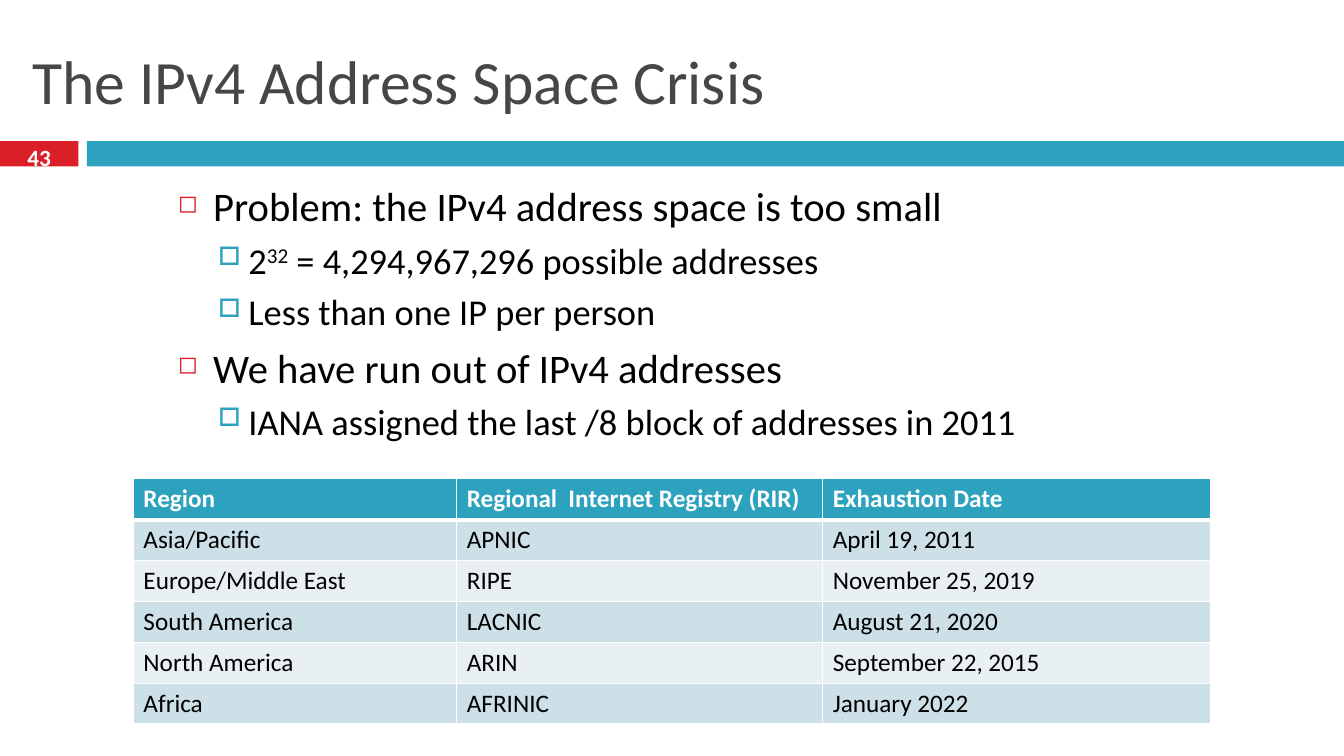
from lxml import etree
from pptx import Presentation
from pptx import util as u
from pptx.dml.color import RGBColor
from pptx.enum import shapes, text
from pptx.oxml import ns

WHITE = RGBColor(0xFF, 0xFF, 0xFF)
BLACK = RGBColor(0, 0, 0)
GRAY = RGBColor(0x46, 0x46, 0x46)
RED = RGBColor(0xDA, 0x1F, 0x28)
TEAL = RGBColor(0x2D, 0xA2, 0xBF)
BANDS = [RGBColor(0xCD, 0xE0, 0xE8), RGBColor(0xE8, 0xF0, 0xF4)]

LEVELS = [
    dict(size=29, left=25.2, hang=25.2, gap=7, mark="◻", color=RED, scale=60),
    dict(size=26, left=50.4, hang=21.6, gap=5.5, mark="□", color=TEAL, scale=70),
]
POINTS = [
    (0, ["Problem: the IPv4 address space is too small"]),
    (1, ["2", "32", " = 4,294,967,296 possible addresses"]),
    (1, ["Less than one IP per person"]),
    (0, ["We have run out of IPv4 addresses"]),
    (1, ["IANA assigned the last /8 block of addresses in 2011"]),
]
REGIONS = [
    ("Region", "Regional  Internet Registry (RIR)", "Exhaustion Date"),
    ("Asia/Pacific", "APNIC", "April 19, 2011"),
    ("Europe/Middle East", "RIPE", "November 25, 2019"),
    ("South America", "LACNIC", "August 21, 2020"),
    ("North America", "ARIN", "September 22, 2015"),
    ("Africa", "AFRINIC", "January 2022"),
]


def add(parent, tag, **attrs):
    node = etree.SubElement(parent, ns.qn(tag))
    for key, value in attrs.items():
        node.set(key, str(value))
    return node


class Deck:
    font = "Calibri"

    def __init__(self, slide):
        self.slide = slide

    def style(self, para, size, color, bold=False):
        for run in para.runs:
            run.font.name = self.font
            run.font.size = u.Pt(size)
            run.font.bold = bold
            run.font.color.rgb = color

    def bar(self, x, y, w, h, color):
        box = self.slide.shapes.add_shape(
            shapes.MSO_SHAPE.RECTANGLE, u.Pt(x), u.Pt(y), u.Pt(w), u.Pt(h))
        box.shadow.inherit = False
        box.fill.solid()
        box.fill.fore_color.rgb = color
        box.line.fill.background()

    def frame(self, x, y, w, h, anchor=text.MSO_ANCHOR.TOP):
        box = self.slide.shapes.add_textbox(u.Pt(x), u.Pt(y), u.Pt(w), u.Pt(h))
        frame = box.text_frame
        frame.word_wrap = True
        frame.vertical_anchor = anchor
        return frame

    def label(self, words, x, y, w, h, size, color, bold=False,
              align=text.PP_ALIGN.LEFT, anchor=text.MSO_ANCHOR.TOP):
        frame = self.frame(x, y, w, h, anchor)
        frame.text = words
        para = frame.paragraphs[0]
        para.alignment = align
        self.style(para, size, color, bold)

    def bullets(self, points, x, y, w, h):
        frame = self.frame(x, y, w, h)
        for i, (depth, parts) in enumerate(points):
            para = frame.add_paragraph() if i else frame.paragraphs[0]
            level = LEVELS[depth]
            para.level = depth
            para.space_before = u.Pt(level["gap"])
            for part in parts:
                para.add_run().text = part
            self.style(para, level["size"], BLACK)
            if len(parts) > 1:
                para.runs[1].font._element.set("baseline", "30000")
            props = para._p.get_or_add_pPr()
            props.set("marL", str(u.Pt(level["left"])))
            props.set("indent", str(-u.Pt(level["hang"])))
            add(add(props, "a:buClr"), "a:srgbClr", val=level["color"])
            add(props, "a:buSzPct", val=level["scale"] * 1000)
            add(props, "a:buChar", char=level["mark"])

    def edges(self, cell, top, bottom):
        props = cell._tc.get_or_add_tcPr()
        for side, width in zip("LRTB", (1, 1, top, bottom)):
            line = add(props, "a:ln" + side, w=u.Pt(width))
            add(add(line, "a:solidFill"), "a:srgbClr", val=WHITE)

    def table(self, rows, x, y, widths, height):
        grid = self.slide.shapes.add_table(
            len(rows), len(widths), u.Pt(x), u.Pt(y),
            u.Pt(sum(widths)), u.Pt(height * len(rows))).table
        for col, width in zip(grid.columns, widths):
            col.width = u.Pt(width)
        for r, row in enumerate(rows):
            grid.rows[r].height = u.Pt(height)
            head = r == 0
            for c, words in enumerate(row):
                cell = grid.cell(r, c)
                cell.text = words
                self.style(cell.text_frame.paragraphs[0], 18,
                           WHITE if head else BLACK, head)
                self.edges(cell, 3 if r == 1 else 1, 3 if head else 1)
                cell.fill.solid()
                cell.fill.fore_color.rgb = TEAL if head else BANDS[(r - 1) % 2]
                if head:
                    cell.vertical_anchor = text.MSO_ANCHOR.BOTTOM


def main():
    show = Presentation()
    show.slide_width, show.slide_height = u.Pt(960), u.Pt(540)
    deck = Deck(show.slides.add_slide(show.slide_layouts[6]))
    deck.bar(0, 100.8, 56, 18, RED)
    deck.bar(62, 100.8, 898, 18, TEAL)
    deck.label("The IPv4 Address Space Crisis", 16, 18, 928, 78, 44, GRAY,
               anchor=text.MSO_ANCHOR.MIDDLE)
    deck.label("43", 0, 98.6, 56, 24, 16.6, WHITE, True, text.PP_ALIGN.CENTER)
    deck.bullets(POINTS, 120, 126, 720, 204)
    deck.table(REGIONS, 95.3, 342, (231, 261.4, 277), 29.2)
    show.save("out.pptx")


if __name__ == "__main__":
    main()
